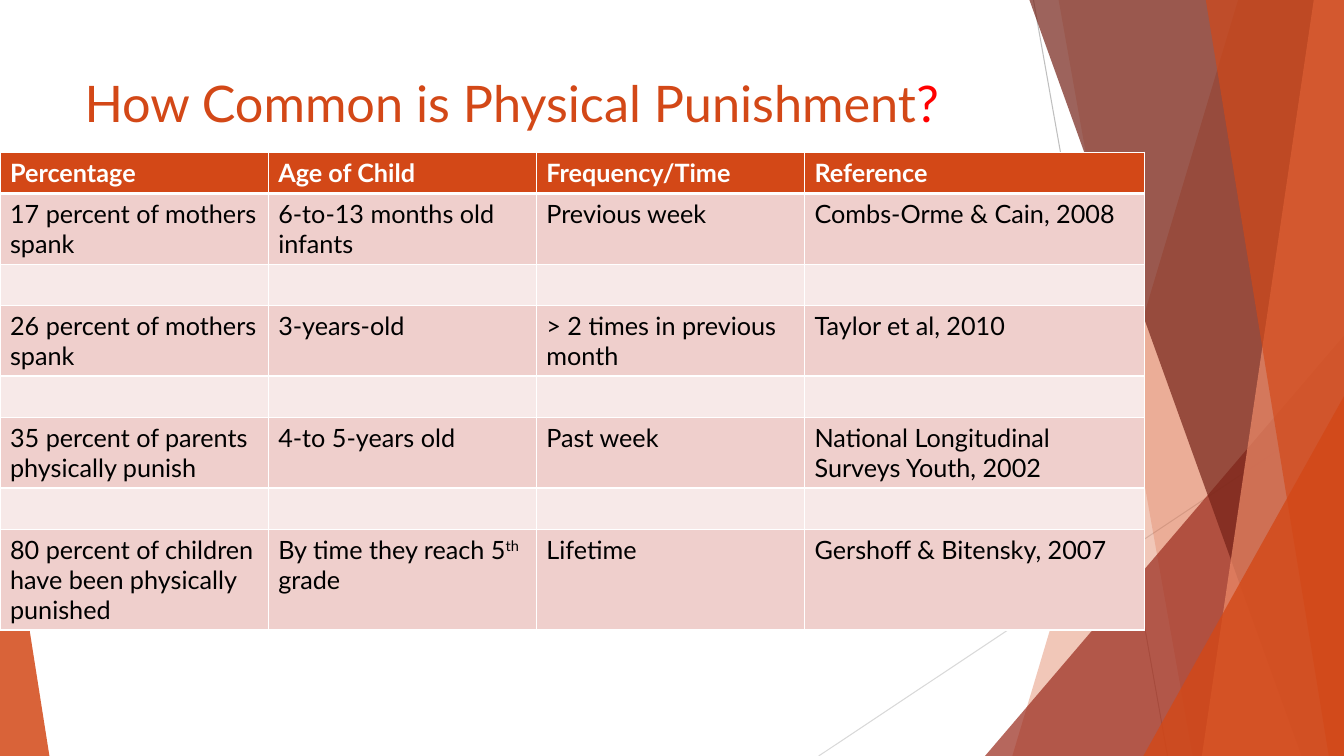
from lxml import etree
from pptx import Presentation, util as u
from pptx.dml.color import RGBColor
from pptx.enum import shapes, text
from pptx.oxml.ns import qn

W, H = 13.33, 7.5
FONT = "Lato"
COLORS = {
    "white": "FFFFFF", "black": "000000", "red": "FF0000",
    "orange": "D34817", "brick": "9B2D1F", "maroon": "742217",
    "salmon": "EF8C6A", "grey": "BFBFBF", "pale_grey": "D9D9D9",
    "band": "EFCFCC", "pale_band": "F7E9E8",
}
ROWS = [
    ["Percentage", "Age of Child", "Frequency/Time", "Reference"],
    ["17 percent of mothers spank", "6-to-13 months old infants",
     "Previous week", "Combs-Orme & Cain, 2008"],
    [""] * 4,
    ["26 percent of mothers spank", "3-years-old",
     "> 2 times in previous month", "Taylor et al, 2010"],
    [""] * 4,
    ["35 percent of parents physically punish", "4-to 5-years old",
     "Past week", "National Longitudinal Surveys Youth, 2002"],
    [""] * 4,
    ["80 percent of children have been physically punished",
     ("By time they reach 5", "th", " grade"),
     "Lifetime", "Gershoff & Bitensky, 2007"],
]


def rgb(name):
    return RGBColor.from_string(COLORS[name])


def add_run(p, words, size=18, color="black", bold=False, raised=False):
    r = p.add_run()
    r.text = words
    r.font.name, r.font.size, r.font.bold = FONT, u.Pt(size), bold
    r.font.color.rgb = rgb(color)
    if raised:
        r.font._element.set("baseline", "30000")


def paint(sp, color, alpha):
    """Fill a shape with a colour at alpha percent opacity, without outline."""
    sp.shadow.inherit = False
    sp.line.fill.background()
    sp.fill.solid()
    sp.fill.fore_color.rgb = rgb(color)
    clr = sp._element.spPr.find(qn("a:solidFill"))[0]
    etree.SubElement(clr, qn("a:alpha")).set("val", str(alpha * 1000))


def add_line(s, start, end, color):
    cx = s.shapes.add_connector(shapes.MSO_CONNECTOR.STRAIGHT,
                                *map(u.Inches, start + end))
    cx.line.color.rgb = rgb(color)
    cx.line.width = u.Pt(0.75)
    etree.SubElement(cx._element.spPr, qn("a:effectLst"))


def add_facet(s, box, top, bottom, color, alpha):
    """Band along the box's right edge, top and bottom wide at its ends."""
    x, y, w, h = box
    right, base = x + w, y + h
    fb = s.shapes.build_freeform(u.Inches(right - top), u.Inches(y))
    corners = [(right, y), (right, base), (right - bottom, base)]
    fb.add_line_segments([(u.Inches(a), u.Inches(b)) for a, b in corners])
    paint(fb.convert_to_shape(), color, alpha)


def add_corner(s, box, w, h, color, alpha, apex=1):
    """Triangle on the box's base, against its right (apex 1) or left (0) side."""
    x = box[0] + (box[2] - w) * apex
    y = box[1] + box[3] - h
    sp = s.shapes.add_shape(shapes.MSO_SHAPE.ISOSCELES_TRIANGLE,
                            *map(u.Inches, (x, y, w, h)))
    sp.adjustments[0] = apex
    paint(sp, color, alpha)


def add_backdrop(s, box):
    x, y, w, h = box
    right, base = x + w, y + h
    add_line(s, (right - 3.08, y), (right - 1.75, base), "grey")
    add_line(s, (right, base - 3.47), (right - 5.21, base), "pale_grey")
    add_facet(s, box, 1.05, 3.29, "orange", 30)
    add_facet(s, box, 2.83, 1.5, "orange", 20)
    add_corner(s, box, 3.56, 4.17, "brick", 72)
    add_facet(s, box, 3.12, 0.42, "maroon", 70)
    add_facet(s, box, 0.3, 1.41, "salmon", 70)
    add_facet(s, box, 1.37, 0.15, "orange", 65)
    add_corner(s, box, 1.99, 3.57, "orange", 80)
    add_corner(s, box, 0.49, 3.11, "orange", 85, apex=0)


def add_title(s, box):
    tf = s.shapes.add_textbox(*map(u.Inches, box)).text_frame
    tf.word_wrap = True
    tf.vertical_anchor = text.MSO_ANCHOR.TOP
    p = tf.paragraphs[0]
    add_run(p, "How Common is Physical Punishment", size=36, color="orange")
    add_run(p, "?", size=36, color="red")


def set_borders(cell, **widths):
    """Draw white cell borders; the widths of L, R, T and B are in points."""
    tcPr = cell._tc.get_or_add_tcPr()
    for side, width in widths.items():
        ln = etree.SubElement(tcPr, qn("a:ln" + side), w=str(u.Pt(width)))
        fill = etree.SubElement(ln, qn("a:solidFill"))
        etree.SubElement(fill, qn("a:srgbClr"), val=COLORS["white"])


def add_survey_table(s, box):
    x, y, w, h = box
    tbl = s.shapes.add_table(len(ROWS), 4, *map(u.Inches, box)).table
    last = w - 3 * 2.66
    for col, width in zip(tbl.columns, [2.66] * 3 + [last]):
        col.width = u.Inches(width)
    for i, row in enumerate(ROWS):
        tbl.rows[i].height = u.Inches(h / len(ROWS))
        header = i == 0
        fill = "orange" if header else "band" if i % 2 else "pale_band"
        for j, words in enumerate(row):
            cell = tbl.cell(i, j)
            set_borders(cell, L=1, R=1, T=3 if i == 1 else 1,
                        B=3 if header else 1)
            cell.fill.solid()
            cell.fill.fore_color.rgb = rgb(fill)
            p = cell.text_frame.paragraphs[0]
            p.font.size = u.Pt(18)
            parts = words if isinstance(words, tuple) else (words,)
            for k, part in enumerate(parts):
                if part:
                    add_run(p, part, color="white" if header else "black",
                            bold=header, raised=k == 1)


def main():
    prs = Presentation()
    prs.slide_width, prs.slide_height = u.Inches(W), u.Inches(H)
    s = prs.slides.add_slide(prs.slide_layouts[6])
    add_backdrop(s, (0, 0, W, H))
    add_title(s, (0.74, 0.67, 9.4, 1.44))
    add_survey_table(s, (0, 1.51, 11.35, 3.28))
    prs.save("out.pptx")


if __name__ == "__main__":
    main()
